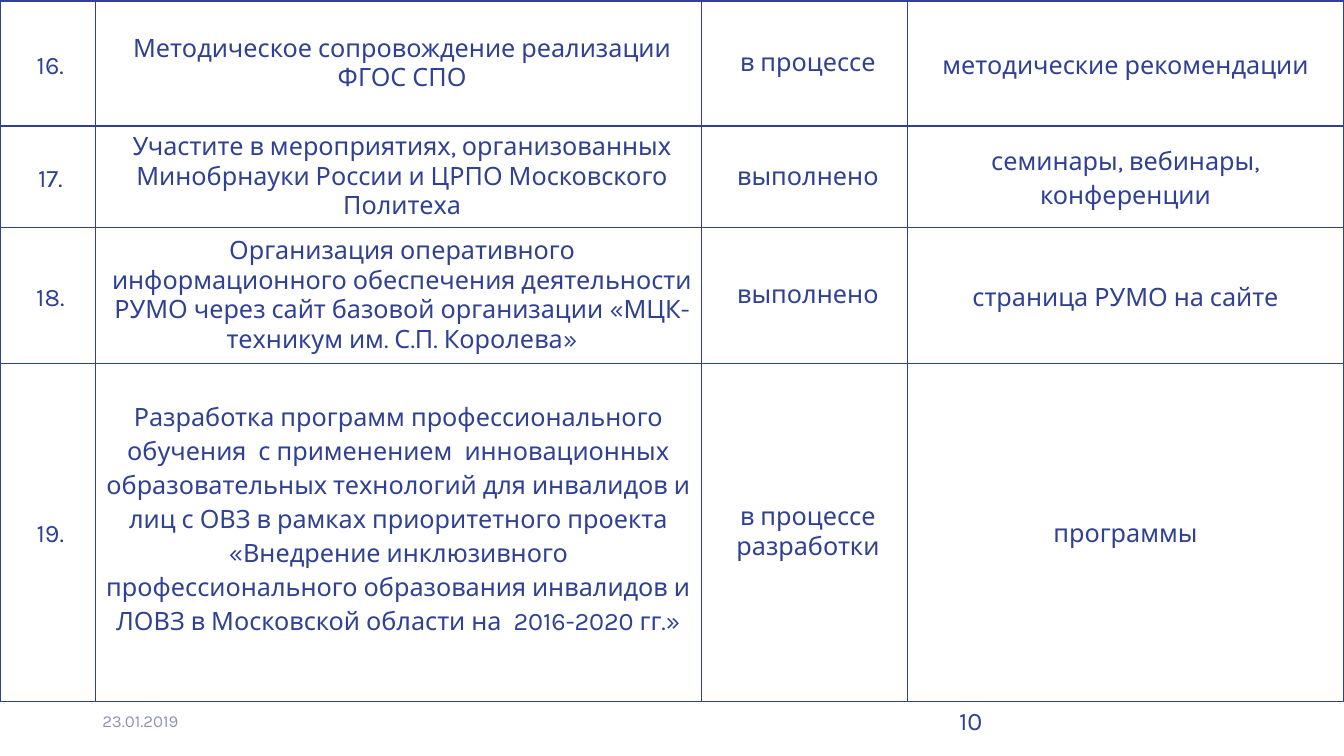
from lxml.etree import SubElement
from pptx import Presentation
from pptx.dml.color import RGBColor
from pptx.enum.text import MSO_ANCHOR as Anchor, PP_ALIGN as Align
from pptx.oxml.ns import qn
from pptx.util import Emu, Pt

BLUE = RGBColor(0x30, 0x41, 0x94)
GREY = RGBColor(0x8F, 0x93, 0xB7)
FONT = "Karla"
COLS = [91, 577, 196, 416]
ROWS = [119, 97, 129, 322]
LEFTS = [12, 14, 14, 7]
LOOSE = {0, 3}
PLAN = [
    ("16.", "Методическое сопровождение реализации ФГОС СПО",
     "в процессе", "методические рекомендации"),
    ("17.", "Участите в мероприятиях, организованных Минобрнауки России "
     "и ЦРПО Московского Политеха",
     "выполнено", "семинары, вебинары, конференции"),
    ("18.", "Организация оперативного информационного обеспечения "
     "деятельности РУМО через сайт базовой организации "
     "«МЦК-техникум им. С.П. Королева»",
     "выполнено", "страница РУМО на сайте"),
    ("19.", "Разработка программ профессионального обучения  с применением  "
     "инновационных образовательных технологий для инвалидов и лиц с ОВЗ "
     "в рамках приоритетного проекта «Внедрение инклюзивного "
     "профессионального образования инвалидов и ЛОВЗ в Московской области "
     "на  2016-2020 гг.»",
     "в процессе разработки", "программы"),
]


def px(n):
    return Emu(n * 9525)


def style(par, size, color):
    font = par.runs[0].font
    font.name, font.size, font.color.rgb = FONT, Pt(size), color


def frame(cell):
    """Draw a thin blue line on all four sides of a cell."""
    props = cell._tc.get_or_add_tcPr()
    for i, side in enumerate("LRTB"):
        line = SubElement(props, qn(f"a:ln{side}"), w=str(Pt(1)))
        fill = SubElement(line, qn("a:solidFill"))
        SubElement(fill, qn("a:srgbClr"), val=str(BLUE))
        props.insert(i, line)


def fill_cell(cell, text, left, loose):
    cell.fill.background()
    frame(cell)
    cell.vertical_anchor = Anchor.MIDDLE
    cell.margin_left, cell.margin_right = px(left), px(7)
    cell.margin_top = cell.margin_bottom = 0
    cell.text_frame.text = text
    par = cell.text_frame.paragraphs[0]
    par.alignment = Align.CENTER
    if loose:
        par.line_spacing = 1.15
    style(par, 18, BLUE)


def add_plan(slide, x, y):
    shape = slide.shapes.add_table(len(ROWS), len(COLS), px(x), px(y),
                                   px(sum(COLS)), px(sum(ROWS)))
    table = shape.table
    table.first_row = table.horz_banding = False
    for col, width in zip(table.columns, COLS):
        col.width = px(width)
    for row, height, texts in zip(table.rows, ROWS, PLAN):
        row.height = px(height)
        for i, (cell, text) in enumerate(zip(row.cells, texts)):
            fill_cell(cell, text, LEFTS[i], i in LOOSE)
    last = table.cell(len(ROWS) - 1, 1)
    last.margin_left, last.margin_bottom = px(7), px(28)
    last.text_frame.paragraphs[0].line_spacing = 1.15


def add_note(slide, x, y, text, size, color, anchor):
    box = slide.shapes.add_textbox(px(x), px(y), px(288), px(38))
    body = box.text_frame
    body.word_wrap = True
    body.vertical_anchor = anchor
    body.text = text
    style(body.paragraphs[0], size, color)


def add_footer(slide, x, y):
    add_note(slide, x + 88, y, "23.01.2019", 12, GREY, Anchor.MIDDLE)
    add_note(slide, x + 904, y, "10", 18, BLUE, Anchor.TOP)


def main():
    deck = Presentation()
    deck.slide_width, deck.slide_height = px(1280), px(720)
    slide = deck.slides.add_slide(deck.slide_layouts[6])
    add_footer(slide, 0, 667)
    add_plan(slide, 0, 1)
    deck.save("out.pptx")


if __name__ == "__main__":
    main()
